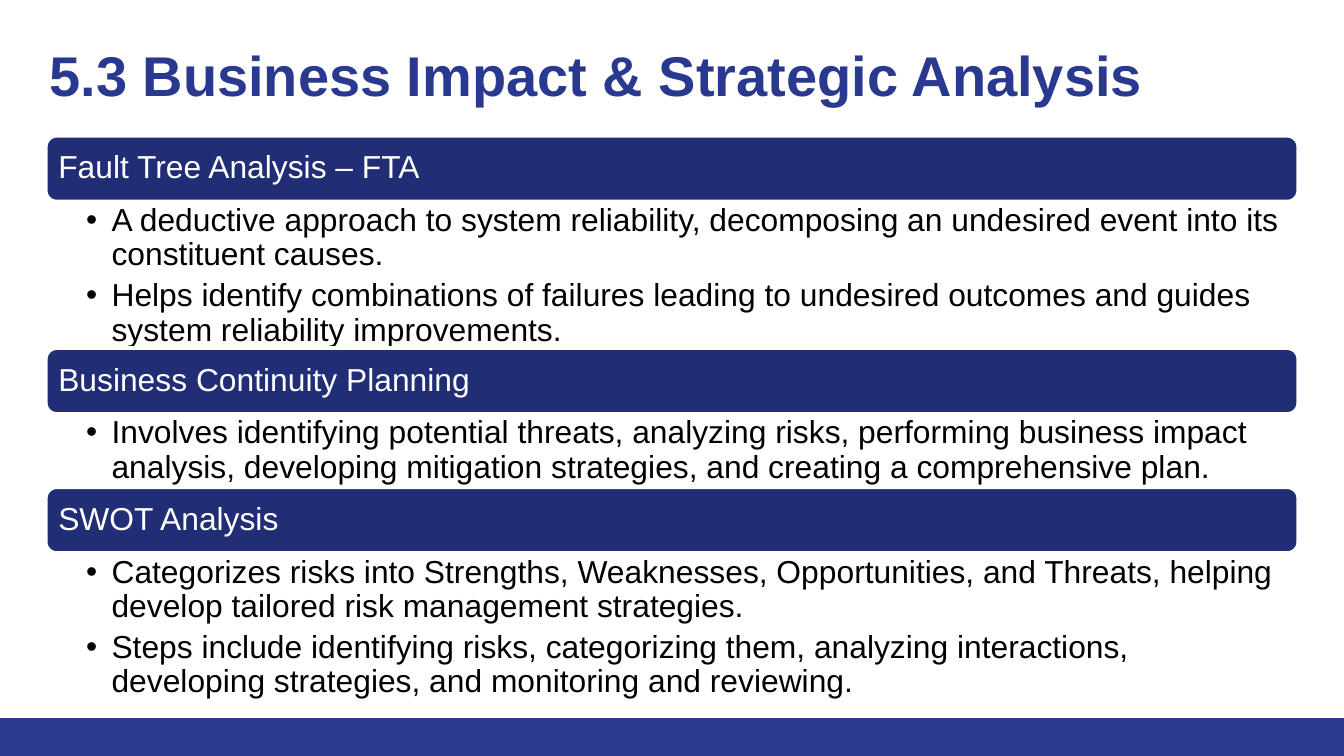
from lxml import etree
from pptx import Presentation
from pptx import util as u
from pptx.dml.color import RGBColor
from pptx.enum import shapes, text
from pptx.oxml.ns import qn

WIDTH = 10
HEIGHT = WIDTH * 9 / 16
BLUE, NAVY, WHITE, BLACK = "2A3990", "212D74", "FFFFFF", "000000"
BAND_HEIGHT, BULLET_HEIGHT = 0.49, 1.09 / 2
SECTIONS = [
    ("Fault Tree Analysis – FTA", [
        "A deductive approach to system reliability, decomposing an undesired event into its constituent causes.",
        "Helps identify combinations of failures leading to undesired outcomes and guides system reliability improvements.",
    ]),
    ("Business Continuity Planning", [
        "Involves identifying potential threats, analyzing risks, performing business impact analysis, "
        "developing mitigation strategies, and creating a comprehensive plan.",
    ]),
    ("SWOT Analysis", [
        "Categorizes risks into Strengths, Weaknesses, Opportunities, and Threats, helping develop "
        "tailored risk management strategies.",
        "Steps include identifying risks, categorizing them, analyzing interactions, developing "
        "strategies, and monitoring and reviewing.",
    ]),
]


def color(hex_code):
    return RGBColor.from_string(hex_code)


def inches(box):
    return [u.Inches(length) for length in box]


def add_bullet(paragraph):
    props = paragraph._p.get_or_add_pPr()
    props.set("marL", str(u.Inches(0.19)))
    props.set("indent", str(-u.Inches(0.19)))
    bullet_color = etree.SubElement(props, qn("a:buClr"))
    etree.SubElement(bullet_color, qn("a:srgbClr"), val=BLACK)
    etree.SubElement(props, qn("a:buFont"), typeface="Arial")
    etree.SubElement(props, qn("a:buChar"), char="•")


def write(shape, lines, size=17, hex_code=BLACK, bold=False, bullets=False, insets=(0.1,) * 4,
          anchor=text.MSO_ANCHOR.TOP, spacing=0.9, after=0):
    """Fill a shape with paragraphs; insets run left, top, right, bottom."""
    frame = shape.text_frame
    frame.word_wrap = True
    frame.vertical_anchor = anchor
    frame.margin_left, frame.margin_top, frame.margin_right, frame.margin_bottom = inches(insets)
    for index, line in enumerate(lines):
        paragraph = frame.add_paragraph() if index else frame.paragraphs[0]
        paragraph.text = line
        if bullets:
            add_bullet(paragraph)
        paragraph.alignment = text.PP_ALIGN.LEFT
        paragraph.line_spacing = spacing
        paragraph.space_after = u.Pt(after)
        font = paragraph.font
        font.name, font.size, font.bold = "Arial", u.Pt(size), bold
        font.color.rgb = color(hex_code)


def add_block(slide, kind, box, fill, outline=None):
    block = slide.shapes.add_shape(kind, *inches(box))
    block.shadow.inherit = False
    block.fill.solid()
    block.fill.fore_color.rgb = color(fill)
    if outline:
        block.line.color.rgb = color(outline)
        block.line.width = u.Pt(2)
    else:
        block.line.fill.background()
    return block


def add_title(slide, box, title):
    write(slide.shapes.add_textbox(*inches(box)), [title], size=30, hex_code=BLUE, bold=True, spacing=1.0)


def add_section(slide, box, heading, points):
    left, top, width, height = box
    band = add_block(slide, shapes.MSO_SHAPE.ROUNDED_RECTANGLE, (left, top, width, BAND_HEIGHT), NAVY, WHITE)
    write(band, [heading], hex_code=WHITE, insets=(0.07,) * 4, anchor=text.MSO_ANCHOR.MIDDLE)
    body = slide.shapes.add_textbox(*inches((left, top + BAND_HEIGHT, width, height - BAND_HEIGHT)))
    write(body, points, bullets=True, insets=(0.3, 0.02, 0.13, 0.02), after=3.6)


def add_sections(slide, box):
    """Stack the sections, each as tall as its number of points needs."""
    left, top, width = box
    for heading, points in SECTIONS:
        height = BAND_HEIGHT + BULLET_HEIGHT * len(points)
        add_section(slide, (left, top, width, height), heading, points)
        top += height


def main():
    deck = Presentation()
    deck.slide_width, deck.slide_height = inches((WIDTH, HEIGHT))
    slide = deck.slides.add_slide(deck.slide_layouts[6])
    footer_height = HEIGHT * 0.05
    add_block(slide, shapes.MSO_SHAPE.RECTANGLE, (0, HEIGHT - footer_height, WIDTH, footer_height), BLUE)
    add_sections(slide, (0.34, 1.01, 9.32))
    add_title(slide, (0.27, 0.2, 9.2, 0.89), "5.3 Business Impact & Strategic Analysis")
    deck.save("out.pptx")


if __name__ == "__main__":
    main()
